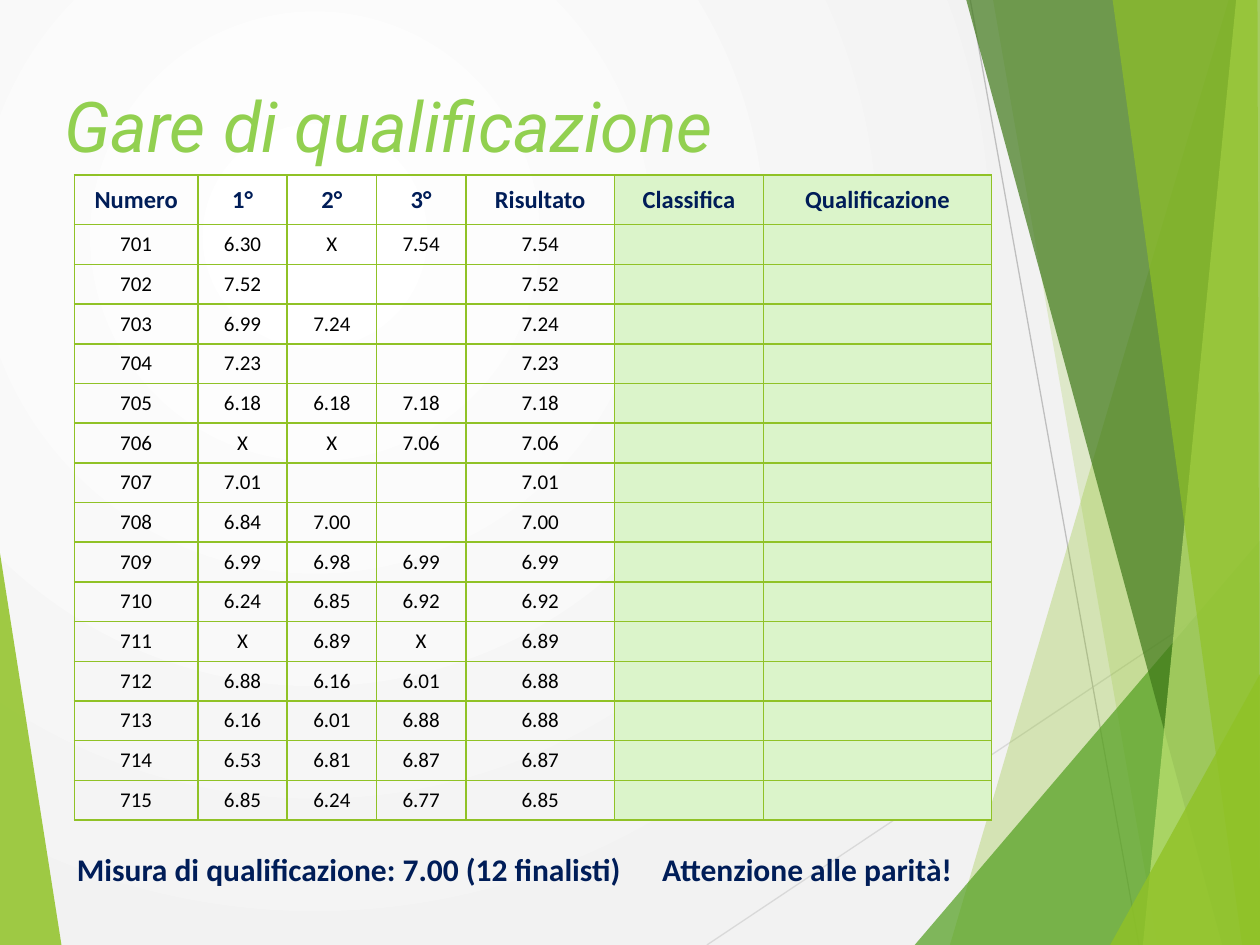
from pptx import Presentation
from pptx.dml.color import RGBColor
from pptx.enum import shapes, text
from pptx.oxml import parse_xml
from pptx.oxml.ns import nsdecls, qn
from pptx.util import Cm, Pt
from lxml import etree

NAVY, LIME, PALE = "001D58", "90C226", "DBF4CA"


def rgb(value):
    return RGBColor.from_string(value)


def add_run(paragraph, words, font_name, size, color, bold=False, italic=False):
    run = paragraph.add_run()
    run.text = words
    run.font.name, run.font.size = font_name, Pt(size)
    run.font.bold, run.font.italic = bold, italic
    run.font.color.rgb = rgb(color)


prs = Presentation()
prs.slide_width, prs.slide_height = Cm(25.4), Cm(19.05)
slide = prs.slides.add_slide(prs.slide_layouts[5])

# Background: radial gradient from white to light grey
backdrop = slide.background.fill
backdrop.gradient()
for stop, color, position in zip(backdrop.gradient_stops, ("FFFFFF", "F2F2F2"), (0, 1)):
    stop.color.rgb = rgb(color)
    stop.position = position
gradient = slide.background._cSld.find(".//" + qn("a:gradFill"))
gradient.replace(gradient.find(qn("a:lin")), parse_xml(
    f'<a:path {nsdecls("a")} path="circle">'
    '<a:fillToRect l="50000" t="50000" r="100000" b="100000"/></a:path>'))

# Thin rays behind the facets
for start, end, color in (
    ((14.25, 19.05), (25.4, 11.6), "D9D9D9"),
    ((19.56, 0), (22.96, 19.05), "BFBFBF"),
):
    ray = slide.shapes.add_connector(
        shapes.MSO_CONNECTOR.STRAIGHT, *(Cm(v) for v in start + end))
    ray.line.color.rgb = rgb(color)
    ray.line.width = Pt(0.75)
    etree.SubElement(ray._element.spPr, qn("a:effectLst"))

# Translucent facets: colour, opacity in percent, corners in cm
facets = (
    (LIME, 85, ((0, 11.15), (1.24, 19.05), (0, 19.05))),
    (LIME, 30, ((24.77, 0), (19.15, 19.05), (25.4, 19.05), (25.4, 0))),
    (LIME, 20, ((20.02, 0), (23.34, 19.05), (25.4, 19.05), (25.4, 0))),
    ("54A021", 72, ((18.44, 19.05), (25.4, 10.9), (25.4, 19.05))),
    ("3F7819", 70, ((19.48, 0), (24.64, 19.05), (25.4, 19.05), (25.4, 0))),
    ("C0E474", 70, ((24.92, 0), (23.04, 19.05), (25.4, 19.05), (25.4, 0))),
    (LIME, 65, ((22.43, 0), (25.04, 19.05), (25.4, 19.05), (25.35, 0))),
    (LIME, 80, ((22.38, 19.05), (25.4, 13.59), (25.4, 19.05))),
)
for color, opacity, corners in facets:
    first, *others = [(Cm(x), Cm(y)) for x, y in corners]
    outline = slide.shapes.build_freeform(*first)
    outline.add_line_segments(others, close=True)
    facet = outline.convert_to_shape()
    facet.shadow.inherit = False
    facet.line.fill.background()
    facet.fill.solid()
    facet.fill.fore_color.rgb = rgb(color)
    tint = facet._element.spPr.find(".//" + qn("a:srgbClr"))
    etree.SubElement(tint, qn("a:alpha"), val=str(opacity * 1000))

# Title
title = slide.shapes.title
title.left, title.top, title.width, title.height = Cm(0), Cm(0.7), Cm(20), Cm(2.5)
heading = title.text_frame
heading.auto_size = text.MSO_AUTO_SIZE.NONE
heading.vertical_anchor = text.MSO_ANCHOR.TOP
heading.margin_left = Cm(1.3)
heading_line = heading.paragraphs[0]
heading_line.alignment = text.PP_ALIGN.LEFT
heading_line.line_spacing = 1.5
heading_line.space_before = Pt(0)
add_run(heading_line, "Gare di qualificazione", "Roboto", 40, "92D050", italic=True)

# Results table: the last two columns stay empty, to be filled in
results = (
    ("Numero", "1°", "2°", "3°", "Risultato", "Classifica", "Qualificazione"),
    ("701", "6.30", "X", "7.54", "7.54"),
    ("702", "7.52", "", "", "7.52"),
    ("703", "6.99", "7.24", "", "7.24"),
    ("704", "7.23", "", "", "7.23"),
    ("705", "6.18", "6.18", "7.18", "7.18"),
    ("706", "X", "X", "7.06", "7.06"),
    ("707", "7.01", "", "", "7.01"),
    ("708", "6.84", "7.00", "", "7.00"),
    ("709", "6.99", "6.98", "6.99", "6.99"),
    ("710", "6.24", "6.85", "6.92", "6.92"),
    ("711", "X", "6.89", "X", "6.89"),
    ("712", "6.88", "6.16", "6.01", "6.88"),
    ("713", "6.16", "6.01", "6.88", "6.88"),
    ("714", "6.53", "6.81", "6.87", "6.87"),
    ("715", "6.85", "6.24", "6.77", "6.85"),
)
column_widths = (2.49, 1.8, 1.8, 1.8, 3, 3, 4.6)
ranking = slide.shapes.add_table(
    len(results), len(column_widths), Cm(1.5), Cm(3.53), Cm(18.49), Cm(13)).table
ranking.horz_banding = False
for column, width in zip(ranking.columns, column_widths):
    column.width = Cm(width)

for r, entries in enumerate(results):
    header = r == 0
    ranking.rows[r].height = Cm(1 if header else 0.8)
    for c in range(len(column_widths)):
        cell = ranking.cell(r, c)
        cell.vertical_anchor = text.MSO_ANCHOR.MIDDLE
        if c >= 5:
            cell.fill.solid()
            cell.fill.fore_color.rgb = rgb(PALE)
        else:
            cell.fill.background()
        for i, side in enumerate(("lnL", "lnR", "lnT", "lnB")):
            cell._tc.tcPr.insert(i, parse_xml(
                f'<a:{side} {nsdecls("a")} w="12700"><a:solidFill>'
                f'<a:srgbClr val="{LIME}"/></a:solidFill></a:{side}>'))
        entry = cell.text_frame.paragraphs[0]
        entry.alignment = text.PP_ALIGN.CENTER
        if c < len(entries) and entries[c]:
            add_run(entry, entries[c], "Calibri", 14 if header else 12,
                    NAVY if header else "000000", bold=header)
        else:
            # Small end mark, so that blank cells keep the row height
            etree.SubElement(entry._p, qn("a:endParaRPr"), sz="1200")

# Qualifying mark and warning
note = slide.shapes.add_textbox(Cm(1.3), Cm(16.75), Cm(18.69), Cm(1.6)).text_frame
note.word_wrap = True
note_line = note.paragraphs[0]
note_line.line_spacing = 1.34
tabs = etree.SubElement(note_line._p.get_or_add_pPr(), qn("a:tabLst"))
etree.SubElement(tabs, qn("a:tab"), pos=str(Cm(11.8)), algn="l")
add_run(note_line, "Misura di qualificazione: 7.00 (12 finalisti)\tAttenzione alle parità!",
        "Calibri", 18, NAVY, bold=True)

prs.save("out.pptx")
